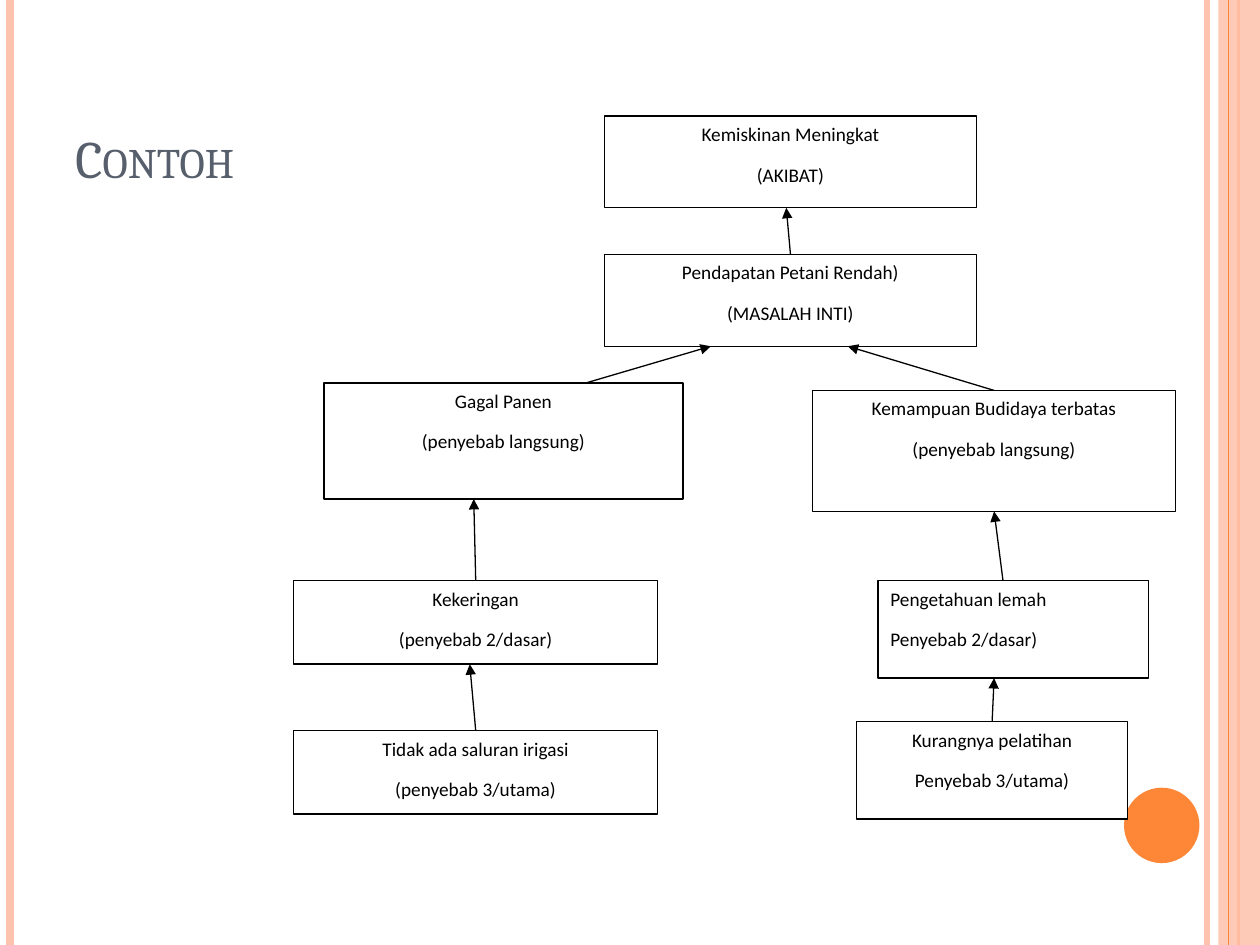
"""Build the "Contoh" problem-tree slide: causes, core problem and effect."""
from lxml import etree
from pptx import Presentation
from pptx.dml.color import RGBColor
from pptx.enum.shapes import MSO_CONNECTOR, MSO_SHAPE
from pptx.enum.text import MSO_ANCHOR, PP_ALIGN
from pptx.oxml.ns import qn
from pptx.util import Cm, Pt

STRAIGHT = MSO_CONNECTOR.STRAIGHT
RECTANGLE, OVAL = MSO_SHAPE.RECTANGLE, MSO_SHAPE.OVAL
TOP, BOTTOM = MSO_ANCHOR.TOP, MSO_ANCHOR.BOTTOM
LEFT, CENTER = PP_ALIGN.LEFT, PP_ALIGN.CENTER
TOP_SIDE, BOTTOM_SIDE = 0, 2
COLORS = {"peach": "FEC3AE", "orange": "FE8637", "title": "575F6D",
          "black": "000000", "white": "FFFFFF"}
WIDTH, HEIGHT = 25.4, 19.05

deck = Presentation()
deck.slide_width, deck.slide_height = Cm(WIDTH), Cm(HEIGHT)
page = deck.slides.add_slide(deck.slide_layouts[6])


def add_line(x1, y1, x2, y2, color, weight):
    line = page.shapes.add_connector(STRAIGHT, Cm(x1), Cm(y1), Cm(x2), Cm(y2))
    line.line.color.rgb = RGBColor.from_string(COLORS[color])
    line.line.width = Pt(weight)
    etree.SubElement(line._element.spPr, qn("a:effectLst"))
    return line


def add_filled(kind, left, top, width, height, color):
    shape = page.shapes.add_shape(kind, Cm(left), Cm(top), Cm(width), Cm(height))
    shape.shadow.inherit = False
    shape.fill.solid()
    shape.fill.fore_color.rgb = RGBColor.from_string(COLORS[color])
    shape.line.fill.background()
    return shape


for x, color, weight in [(24.33, "peach", 3), (0.2, "peach", 4.5), (24.97, "orange", 1.5)]:
    add_line(x, 0, x, HEIGHT, color, weight)
band = add_filled(RECTANGLE, 24.56, 0, WIDTH - 24.56, HEIGHT, "peach")
band_color = band._element.spPr.find(qn("a:solidFill"))[0]
etree.SubElement(band_color, qn("a:alpha"), val="87000")
add_line(24.77, 0, 24.77, HEIGHT, "orange", 0.75)
add_filled(OVAL, 22.66, 15.88, 1.52, 1.52, "orange")

boxes = {}
for name, left, top, width, height, align, lines in [
    ("effect", 12.19, 2.34, 7.49, 1.85, CENTER, ["Kemiskinan Meningkat", "(AKIBAT)"]),
    ("core", 12.19, 5.13, 7.49, 1.85, CENTER, ["Pendapatan Petani Rendah)", "(MASALAH INTI)"]),
    ("harvest", 6.53, 7.72, 7.24, 2.34, CENTER, ["Gagal Panen", "(penyebab langsung)"]),
    ("skill", 16.38, 7.87, 7.32, 2.44, CENTER,
     ["Kemampuan Budidaya terbatas", "(penyebab langsung)"]),
    ("drought", 5.92, 11.71, 7.34, 1.68, CENTER, ["Kekeringan", "(penyebab 2/dasar)"]),
    ("knowledge", 17.7, 11.71, 5.46, 1.96, LEFT, ["Pengetahuan lemah", "Penyebab 2/dasar)"]),
    ("irrigation", 5.92, 14.73, 7.34, 1.68, CENTER,
     ["Tidak ada saluran irigasi", "(penyebab 3/utama)"]),
    ("training", 17.27, 14.55, 5.46, 1.96, CENTER, ["Kurangnya pelatihan", "Penyebab 3/utama)"]),
]:
    box = boxes[name] = add_filled(RECTANGLE, left, top, width, height, "white")
    box.line.color.rgb = RGBColor.from_string(COLORS["black"])
    box.line.width = Pt(0.75)
    frame = box.text_frame
    frame.word_wrap = True
    frame.vertical_anchor = TOP
    frame.text = "\n".join(lines)
    for para in frame.paragraphs:
        para.alignment = align
        para.space_after = Pt(10)
        para.font.name, para.font.size = "Calibri", Pt(11)
        para.font.color.rgb = RGBColor.from_string(COLORS["black"])

for x1, y1, x2, y2, source, target in [
    (11.81, 7.72, 14.33, 6.98, None, None),
    (20.04, 7.87, 17.09, 6.98, "skill", None),
    (9.63, 11.71, 9.55, 10.06, "drought", None),
    (20.22, 11.71, 20.04, 10.31, None, "skill"),
    (15.88, 5.13, 15.85, 4.19, "core", None),
    (9.55, 14.73, 9.47, 13.39, "irrigation", None),
    (20.04, 14.55, 20.04, 13.67, "training", None),
]:
    arrow = add_line(x1, y1, x2, y2, "black", 0.75)
    etree.SubElement(arrow.line._get_or_add_ln(), qn("a:tailEnd"), type="triangle")
    if source:
        arrow.begin_connect(boxes[source], TOP_SIDE)
    if target:
        arrow.end_connect(boxes[target], BOTTOM_SIDE)

title = page.shapes.add_textbox(Cm(1.27), Cm(0.76), Cm(7.82), Cm(3.18))
title.text_frame.word_wrap = True
title.text_frame.vertical_anchor = BOTTOM
para = title.text_frame.paragraphs[0]
span = para.add_run()
span.text = "Contoh"
span.font.name, span.font.size = "Cambria", Pt(30)
span.font.color.rgb = RGBColor.from_string(COLORS["title"])
span._r.get_or_add_rPr().set("cap", "small")

deck.save("out.pptx")
